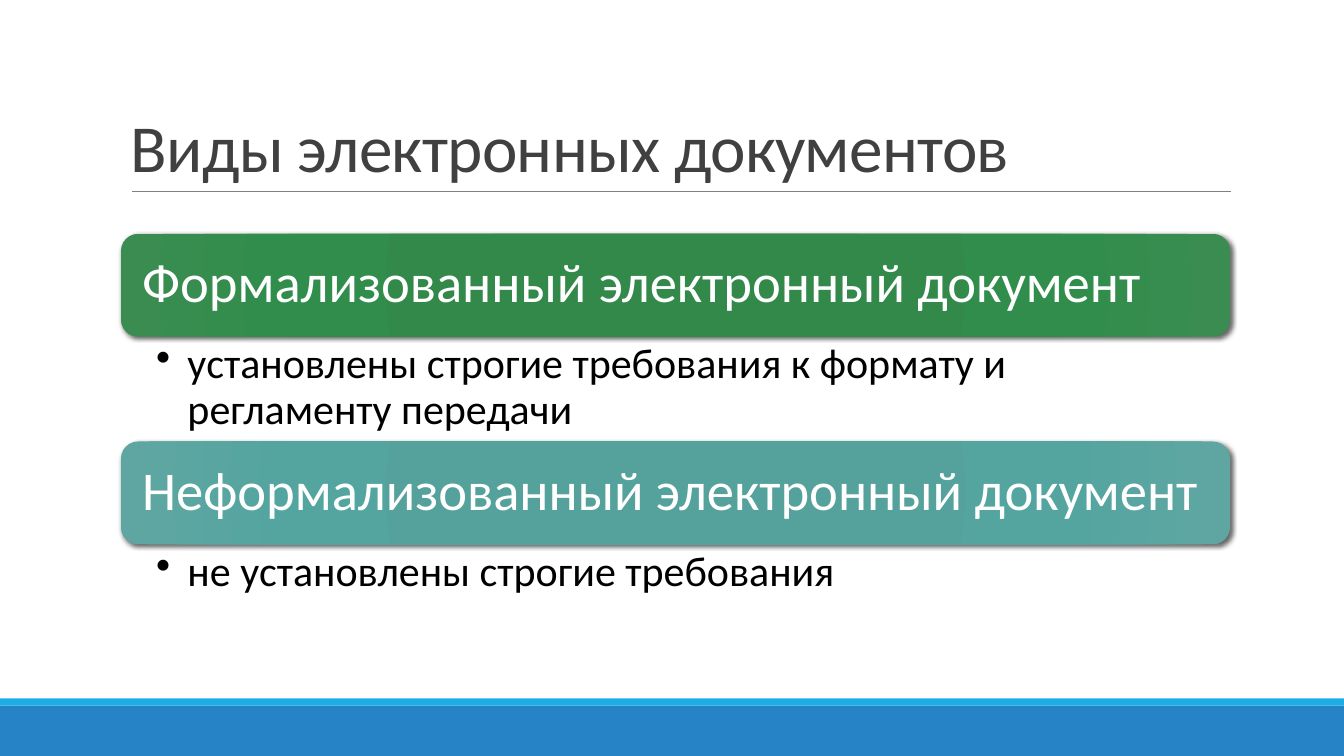
import pptx
import pptx.dml.color
import pptx.enum.shapes
import pptx.enum.text
import pptx.oxml
import pptx.oxml.ns
import pptx.util

PX = 9144
NS = 'xmlns:a="http://schemas.openxmlformats.org/drawingml/2006/main"'
INK = {
    "title": "404040", "rule": "808080", "body": "000000", "white": "FFFFFF",
    "base": "2683C6", "stripe": "1CADE4",
    "green": ["2F8949", "32894A", "318D4B", "3A8C51"],
    "teal": ["52A19C", "55A19C", "54A5A0", "5FA6A2"],
}
FORM = pptx.enum.shapes.MSO_SHAPE
ANCHOR = pptx.enum.text.MSO_ANCHOR

deck = pptx.Presentation()
deck.slide_width, deck.slide_height = 1333 * PX, 750 * PX
slide = deck.slides.add_slide(deck.slide_layouts[6])
shapes = slide.shapes


def put_text(text, left, top, width, height, size, ink, anchor=ANCHOR.TOP,
             pad=(10, 5, 10, 5), lead=0.9, track=0, bullet=False):
    box = shapes.add_textbox(left * PX, top * PX, width * PX, height * PX)
    frame = box.text_frame
    frame.word_wrap = True
    frame.vertical_anchor = anchor
    frame.margin_left, frame.margin_top, frame.margin_right, frame.margin_bottom = [
        side * PX for side in pad]
    para = frame.paragraphs[0]
    para.line_spacing = lead
    run = para.add_run()
    run.text = text
    run.font.name = "Calibri"
    run.font.size = pptx.util.Pt(size)
    run.font.color.rgb = pptx.dml.color.RGBColor.from_string(INK[ink])
    if track:
        run.font.element.set("spc", str(track)) if hasattr(run.font, "element") else run._r.get_or_add_rPr().set("spc", str(track))
    if bullet:
        props = para._p.get_or_add_pPr()
        props.set("marL", str(31 * PX))
        props.set("indent", str(-31 * PX))
        props.append(pptx.oxml.parse_xml(f'<a:buChar {NS} char="•"/>'))


for ink, top, height in [("base", 700, 50), ("stripe", 693, 7)]:
    band = shapes.add_shape(FORM.RECTANGLE, 0, top * PX, 1333 * PX, height * PX)
    band.shadow.inherit = False
    band.fill.solid()
    band.fill.fore_color.rgb = pptx.dml.color.RGBColor.from_string(INK[ink])
    band.line.fill.background()

rule = shapes.add_connector(pptx.enum.shapes.MSO_CONNECTOR.STRAIGHT,
                            131 * PX, 190 * PX, 1221 * PX, 190 * PX)
rule.line.color.rgb = pptx.dml.color.RGBColor.from_string(INK["rule"])
rule.line.width = pptx.util.Pt(0.5)
rule._element.spPr.append(pptx.oxml.parse_xml(f"<a:effectLst {NS}/>"))

put_text("Виды электронных документов", 120, 31, 1100, 159, 48, "title",
         anchor=ANCHOR.BOTTOM, lead=0.85, track=-50)

cards = [
    ("green", "Формализованный электронный документ",
     "установлены строгие требования к формату и регламенту передачи", 104),
    ("teal", "Неформализованный электронный документ",
     "не установлены строгие требования", 71),
]
for row, (ink, head, note, height) in enumerate(cards):
    top = 232 + row * 206
    card = shapes.add_shape(FORM.ROUNDED_RECTANGLE, 120 * PX, top * PX, 1100 * PX, 102 * PX)
    card.line.fill.background()
    card.shadow.inherit = False
    stops = "".join(f'<a:gs pos="{spot * 1000}"><a:srgbClr val="{tint}"/></a:gs>'
                    for spot, tint in zip([0, 34, 70, 100], INK[ink]))
    props = card._element.spPr
    props.find(pptx.oxml.ns.qn("a:ln")).addprevious(pptx.oxml.parse_xml(
        f'<a:gradFill {NS} rotWithShape="1"><a:gsLst>{stops}</a:gsLst><a:path path="circle">'
        '<a:fillToRect l="100000" t="100000" r="100000" b="100000"/></a:path></a:gradFill>'))
    props.find(pptx.oxml.ns.qn("a:effectLst")).append(pptx.oxml.parse_xml(
        f'<a:outerShdw {NS} blurRad="38100" dist="25400" dir="2700000" algn="br" rotWithShape="0">'
        '<a:srgbClr val="000000"><a:alpha val="60000"/></a:srgbClr></a:outerShdw>'))
    put_text(head, 125, top + 5, 1090, 92, 39, "white", anchor=ANCHOR.MIDDLE, pad=(16,) * 4)
    put_text(note, 120, top + 103, 1100, height, 30, "body", pad=(35, 5, 30, 5), bullet=True)

deck.save("out.pptx")
